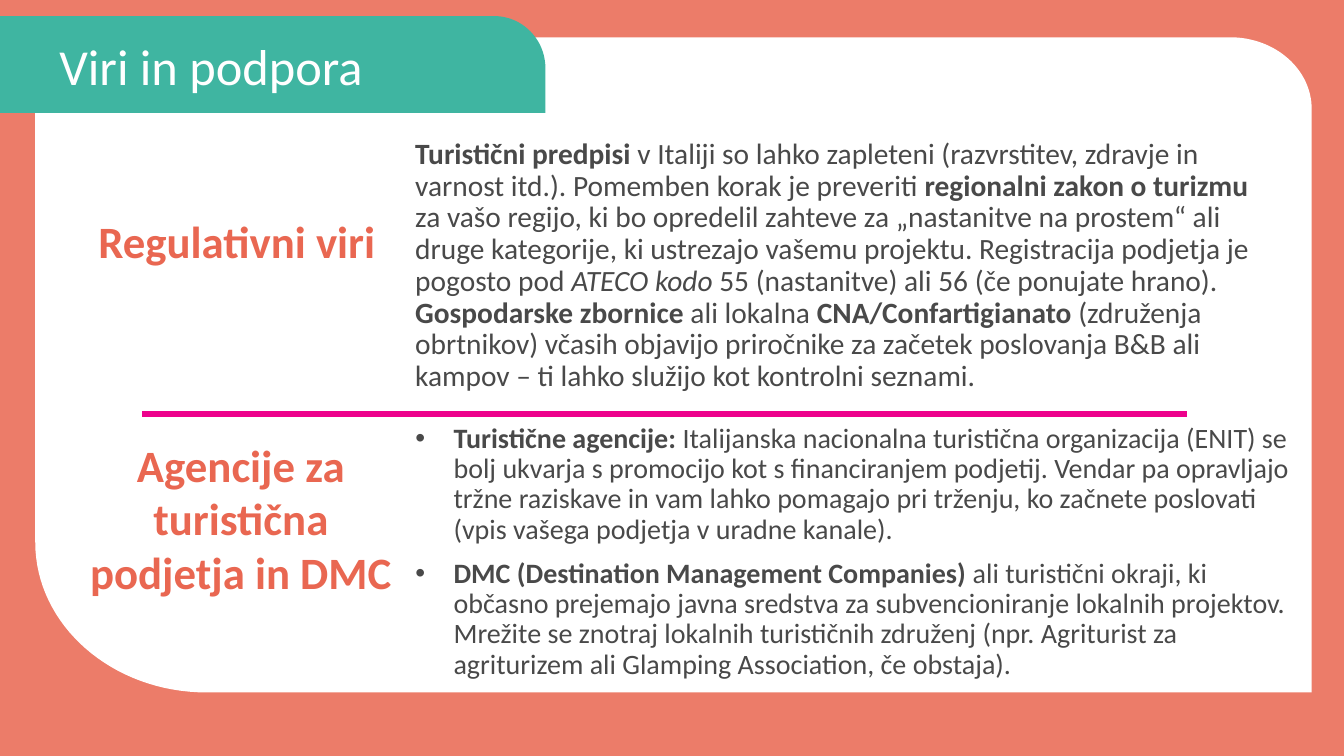
"""Build the slide on sources and support for tourism businesses."""
from dataclasses import dataclass

from lxml.etree import SubElement
from pptx import Presentation
from pptx.dml.color import RGBColor
from pptx.enum.shapes import MSO_CONNECTOR as Connector
from pptx.enum.text import MSO_ANCHOR as Anchor, PP_ALIGN as Align
from pptx.oxml.ns import qn
from pptx.slide import Slide
from pptx.util import Inches, Pt

CORAL, TEAL, WHITE = "EC7C69", "3FB5A1", "FFFFFF"
GREY, LABEL, MAGENTA = "494949", "E96751", "ED028C"
HANGING = Inches(0.38)
CURVE_STEPS = 32

Point = tuple[float, float]


@dataclass(frozen=True)
class Span:
    text: str
    bold: bool = False
    italic: bool = False


@dataclass(frozen=True)
class TextBlock:
    area: tuple[float, float, float, float]
    paras: list[list[Span]]
    size: int
    color: str
    align: Align = Align.LEFT
    anchor: Anchor = Anchor.TOP
    line_spacing: float = 0.9
    bullets: bool = False


@dataclass(frozen=True)
class Panel:
    start: Point
    segments: list[tuple[Point, ...]]
    color: str


PANELS = [
    Panel((0.35, 0.37), [
        ((12.2, 0.37),),
        ((12.65, 0.37), (13.01, 0.69), (13.01, 1.08)),
        ((13.01, 6.87),),
        ((2.05, 6.87),),
        ((1.11, 6.87), (0.35, 6.2), (0.35, 5.38)),
    ], WHITE),
    Panel((0, 0.16), [
        ((4.9, 0.16),),
        ((5.18, 0.16), (5.41, 0.39), (5.41, 0.68)),
        ((5.41, 1.12),),
        ((0, 1.12),),
    ], TEAL),
]

BLOCKS = [
    TextBlock((4.02, 1.33, 8.67, 2.42), [[
        Span("Turistični predpisi ", bold=True),
        Span("v Italiji so lahko zapleteni (razvrstitev, zdravje in varnost itd.). "
             "Pomemben korak je preveriti "),
        Span("regionalni zakon o turizmu ", bold=True),
        Span("za vašo regijo, ki bo opredelil zahteve za „nastanitve na prostem“ ali "
             "druge kategorije, ki ustrezajo vašemu projektu. Registracija podjetja "
             "je pogosto pod "),
        Span("ATECO kodo", italic=True),
        Span(" 55 (nastanitve) ali 56 (če ponujate hrano). "),
        Span("Gospodarske zbornice ", bold=True),
        Span("ali lokalna "),
        Span("CNA/Confartigianato ", bold=True),
        Span("(združenja obrtnikov) včasih objavijo priročnike za začetek poslovanja "
             "B&B ali kampov – ti lahko služijo kot kontrolni seznami."),
    ]], 21, GREY),
    TextBlock((4.02, 4.16, 8.89, 2.86), [
        [
            Span("Turistične agencije: ", bold=True),
            Span("Italijanska nacionalna turistična organizacija (ENIT) se bolj ukvarja "
                 "s promocijo kot s financiranjem podjetij. Vendar pa opravljajo tržne "
                 "raziskave in vam lahko pomagajo pri trženju, ko začnete poslovati "
                 "(vpis vašega podjetja v uradne kanale)."),
        ],
        [
            Span("DMC (Destination Management Companies) ", bold=True),
            Span("ali turistični okraji, ki občasno prejemajo javna sredstva za "
                 "subvencioniranje lokalnih projektov. Mrežite se znotraj lokalnih "
                 "turističnih združenj (npr. Agriturist za agriturizem ali Glamping "
                 "Association, če obstaja)."),
        ],
    ], 20, GREY, bullets=True),
    TextBlock((0.49, 0.29, 5.51, 0.79), [[Span("Viri in podpora")]], 36, WHITE,
              anchor=Anchor.MIDDLE),
    TextBlock((0.39, 2.07, 4.02, 1.18), [[Span("Regulativni viri ", bold=True)]],
              32, LABEL, Align.CENTER, line_spacing=1),
    TextBlock((0.65, 4.29, 3.48, 2.26),
              [[Span("Agencije za turistična podjetja in DMC", bold=True)]],
              32, LABEL, Align.CENTER, line_spacing=1),
]


def rgb(value: str) -> RGBColor:
    return RGBColor.from_string(value)


def curve_points(nodes: tuple[Point, ...]) -> list[Point]:
    points = []
    for step in range(1, CURVE_STEPS + 1):
        t = step / CURVE_STEPS
        weights = ((1 - t) ** 3, 3 * t * (1 - t) ** 2, 3 * t * t * (1 - t), t ** 3)
        points.append(tuple(sum(weight * node[axis] for weight, node in zip(weights, nodes))
                            for axis in (0, 1)))
    return points


def draw_panel(page: Slide, panel: Panel) -> None:
    outline = [panel.start]
    for segment in panel.segments:
        outline += curve_points((outline[-1], *segment)) if len(segment) == 3 else segment
    corners = [(Inches(x), Inches(y)) for x, y in outline]
    builder = page.shapes.build_freeform(*corners[0])
    builder.add_line_segments(corners[1:], close=True)
    shape = builder.convert_to_shape()
    shape.shadow.inherit = False
    shape.fill.solid()
    shape.fill.fore_color.rgb = rgb(panel.color)
    shape.line.fill.background()


def draw_divider(page: Slide) -> None:
    y = Inches(4.11)
    divider = page.shapes.add_connector(Connector.STRAIGHT, Inches(1.41), y, Inches(11.77), y)
    divider.line.color.rgb = rgb(MAGENTA)
    divider.line.width = Pt(4.5)
    SubElement(divider._element.spPr, qn("a:effectLst"))


def draw_text(page: Slide, block: TextBlock) -> None:
    box = page.shapes.add_textbox(*map(Inches, block.area))
    frame = box.text_frame
    frame.word_wrap = True
    frame.vertical_anchor = block.anchor
    for index, spans in enumerate(block.paras):
        para = frame.add_paragraph() if index else frame.paragraphs[0]
        para.alignment = block.align
        para.line_spacing = block.line_spacing
        if index:
            para.space_before = Pt(10)
        if block.bullets:
            properties = para._p.get_or_add_pPr()
            properties.set("marL", str(HANGING))
            properties.set("indent", str(-HANGING))
            SubElement(properties, qn("a:buFont"), typeface="Arial")
            SubElement(properties, qn("a:buChar"), char="•")
        for span in spans:
            run = para.add_run()
            run.text = span.text
            run.font.name = "Calibri"
            run.font.size = Pt(block.size)
            run.font.bold = span.bold
            run.font.italic = span.italic
            run.font.color.rgb = rgb(block.color)


def main() -> None:
    deck = Presentation()
    deck.slide_width, deck.slide_height = Inches(13.33), Inches(7.5)
    page = deck.slides.add_slide(deck.slide_layouts[6])
    page.background.fill.solid()
    page.background.fill.fore_color.rgb = rgb(CORAL)
    for panel in PANELS:
        draw_panel(page, panel)
    draw_divider(page)
    for block in BLOCKS:
        draw_text(page, block)
    deck.save("out.pptx")


if __name__ == "__main__":
    main()
